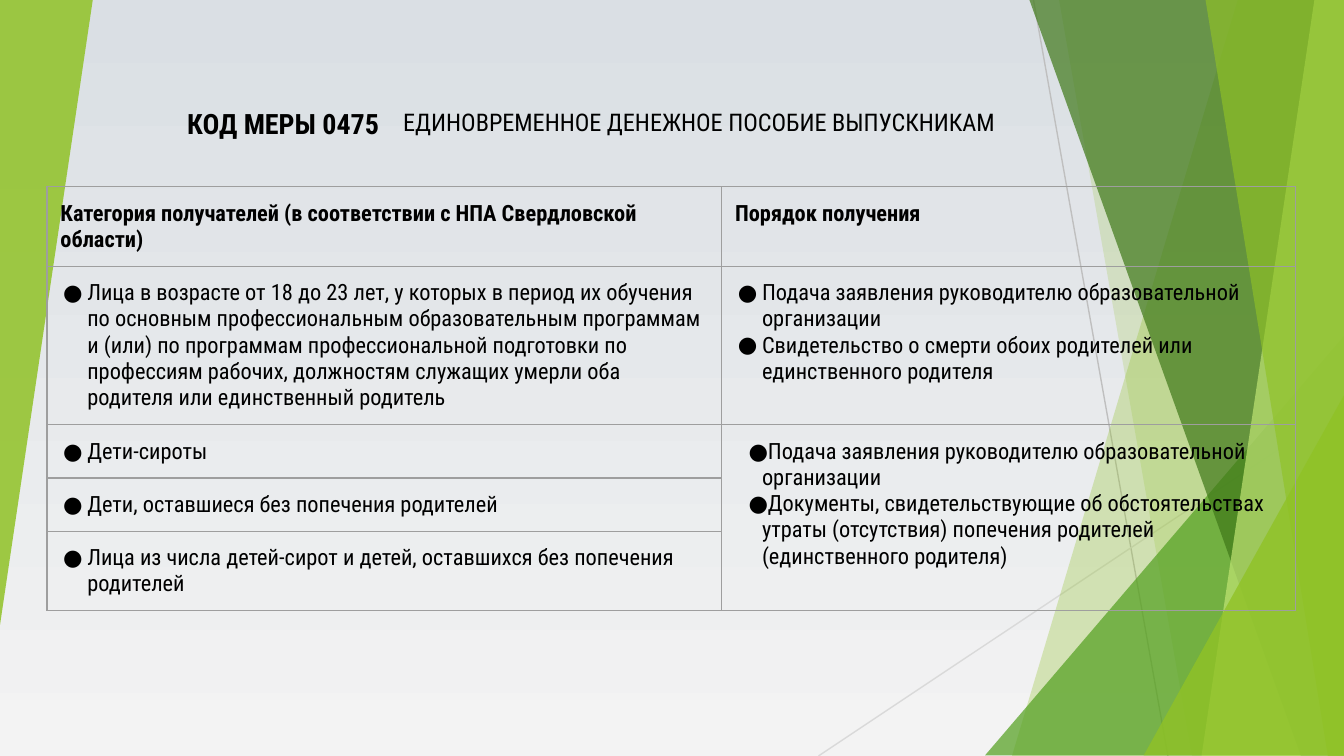
from dataclasses import dataclass

from lxml.etree import SubElement
from pptx import Presentation
from pptx.dml.color import RGBColor
from pptx.enum.shapes import MSO_CONNECTOR, MSO_SHAPE
from pptx.enum.text import MSO_ANCHOR, MSO_AUTO_SIZE, PP_ALIGN
from pptx.oxml import parse_xml
from pptx.oxml.ns import nsdecls, qn
from pptx.util import Inches, Pt

WIDTH = 10
HEIGHT = WIDTH * 9 / 16
FONT = "Roboto Condensed"
BLACK, BORDER, GREEN = "000000", "9E9E9E", "90C226"
COLUMNS = [5.02, 4.27]
ROWS = [0.59, 1.18, 0.39, 0.39, 0.59]


@dataclass
class Ray:
    start: tuple[float, float]
    end: tuple[float, float]
    color: str


@dataclass
class Band:
    """A slanted band that fills everything up to the right slide edge."""
    top_x: float
    bottom_x: float
    color: str
    opacity: int


@dataclass
class Wedge:
    left: float
    top: float
    width: float
    height: float
    color: str
    opacity: int
    rotation: int = 0


@dataclass
class Entry:
    row: int
    column: int
    lines: list[str]
    heading: bool = False
    left_margin: float = 0.1
    indent: float = 0.2


RAYS = [
    Ray((7.69, 0), (8.69, HEIGHT), "BFBFBF"),
    Ray((WIDTH, 3.02), (6.09, HEIGHT), "D9D9D9"),
]
FACETS = [
    Band(9.21, 7.53, GREEN, 30),
    Band(7.88, 8.87, GREEN, 20),
    Wedge(7.33, 2.5, 2.67, 3.12, "54A021", 72),
    Band(7.66, 9.68, "3F7819", 70),
    Band(9.78, 8.94, "C0E474", 70),
    Band(8.97, 9.88, GREEN, 65),
    Wedge(8.51, 2.94, 1.49, 2.68, GREEN, 80),
    Wedge(0, 0, 0.69, 4.65, GREEN, 85, 180),
]
APPLICATION = "Подача заявления руководителю образовательной организации"
ENTRIES = [
    Entry(0, 0, ["Категория получателей (в соответствии с НПА Свердловской области)"], True),
    Entry(0, 1, ["Порядок получения"], True),
    Entry(1, 0, ["Лица в возрасте от 18 до 23 лет, у которых в период их обучения по основным "
                 "профессиональным образовательным программам и (или) по программам "
                 "профессиональной подготовки по профессиям рабочих, должностям служащих "
                 "умерли оба родителя или единственный родитель"]),
    Entry(1, 1, [APPLICATION,
                 "Свидетельство о смерти обоих родителей или единственного родителя"]),
    Entry(2, 0, ["Дети-сироты"]),
    Entry(2, 1, [APPLICATION,
                 "Документы, свидетельствующие об обстоятельствах утраты (отсутствия) "
                 "попечения родителей (единственного родителя)"],
          left_margin=0.2, indent=0.1),
    Entry(3, 0, ["Дети, оставшиеся без попечения родителей"]),
    Entry(4, 0, ["Лица из числа детей-сирот и детей, оставшихся без попечения родителей"]),
]


def rgb(value: str) -> RGBColor:
    return RGBColor.from_string(value)


def style(para, size: float, bold: bool = False) -> None:
    font = para.font
    font.name, font.size, font.bold = FONT, Pt(size), bold
    font.color.rgb = rgb(BLACK)


def draw_ray(page, ray: Ray) -> None:
    line = page.shapes.add_connector(
        MSO_CONNECTOR.STRAIGHT, *map(Inches, ray.start + ray.end))
    line.line.color.rgb = rgb(ray.color)
    line.line.width = Pt(0.75)
    SubElement(line.element.spPr, qn("a:effectLst"))


def draw_facet(page, facet: Band | Wedge) -> None:
    if isinstance(facet, Band):
        builder = page.shapes.build_freeform(Inches(facet.top_x), 0)
        builder.add_line_segments([
            (Inches(x), Inches(y)) for x, y in
            [(WIDTH, 0), (WIDTH, HEIGHT), (facet.bottom_x, HEIGHT)]])
        shape = builder.convert_to_shape()
    else:
        shape = page.shapes.add_shape(MSO_SHAPE.ISOSCELES_TRIANGLE, *map(
            Inches, (facet.left, facet.top, facet.width, facet.height)))
        shape.adjustments[0] = 1
        shape.rotation = facet.rotation
    shape.shadow.inherit = False
    shape.line.fill.background()
    shape.fill.solid()
    shape.fill.fore_color.rgb = rgb(facet.color)
    color = shape.element.spPr.find(f"{qn('a:solidFill')}/{qn('a:srgbClr')}")
    SubElement(color, qn("a:alpha"), val=str(facet.opacity * 1000))


def set_caption(box, place: tuple, text: str, size: float, inset: tuple,
                align: PP_ALIGN, bold: bool = False):
    box.left, box.top, box.width, box.height = map(Inches, place)
    frame = box.text_frame
    frame.word_wrap, frame.auto_size = True, MSO_AUTO_SIZE.NONE
    frame.vertical_anchor = MSO_ANCHOR.MIDDLE
    frame.margin_left = frame.margin_right = Inches(inset[0])
    frame.margin_top = frame.margin_bottom = Inches(inset[1])
    para = frame.paragraphs[0]
    para.text, para.alignment = text, align
    style(para, size, bold)
    return para


def add_bullet(para, indent: float) -> None:
    """Must run before the paragraph font is set, to keep the XML order valid."""
    props = para._p.get_or_add_pPr()
    props.set("marL", str(Inches(indent)))
    props.set("indent", str(Inches(-0.18)))
    SubElement(SubElement(props, qn("a:buClr")), qn("a:srgbClr"), val=BLACK)
    SubElement(props, qn("a:buFont"), typeface=FONT)
    SubElement(props, qn("a:buChar"), char="●")


def format_cell(cell) -> None:
    cell.fill.background()
    props = cell._tc.get_or_add_tcPr()
    for index, side in enumerate("LRTB"):
        props.insert(index, parse_xml(
            f'<a:ln{side} {nsdecls("a")} w="{Pt(0.75)}"><a:solidFill>'
            f'<a:srgbClr val="{BORDER}"/></a:solidFill></a:ln{side}>'))


def fill_cell(cell, entry: Entry) -> None:
    cell.margin_left = Inches(entry.left_margin)
    cell.margin_right = cell.margin_top = cell.margin_bottom = Inches(0.1)
    frame = cell.text_frame
    frame.text = "\n".join(entry.lines)
    for para in frame.paragraphs:
        if not entry.heading:
            add_bullet(para, entry.indent)
        style(para, 12, entry.heading)


def draw_table(page) -> None:
    table = page.shapes.add_table(len(ROWS), len(COLUMNS), *map(
        Inches, (0.35, 1.39, sum(COLUMNS), sum(ROWS)))).table
    table.first_row = table.horz_banding = False
    for column, width in zip(table.columns, COLUMNS):
        column.width = Inches(width)
    for row, height in zip(table.rows, ROWS):
        row.height = Inches(height)
    for cell in table.iter_cells():
        format_cell(cell)
    table.cell(2, 1).merge(table.cell(4, 1))
    for entry in ENTRIES:
        fill_cell(table.cell(entry.row, entry.column), entry)


def main() -> None:
    deck = Presentation()
    deck.slide_width, deck.slide_height = Inches(WIDTH), Inches(HEIGHT)
    page = deck.slides.add_slide(deck.slide_layouts[5])
    backdrop = page.background.fill
    backdrop.gradient()
    backdrop.gradient_angle = 270
    for stop, color in zip(backdrop.gradient_stops, ("DADFE4", "F3F3F3")):
        stop.color.rgb = rgb(color)

    for ray in RAYS:
        draw_ray(page, ray)
    for facet in FACETS:
        draw_facet(page, facet)
    title = set_caption(page.shapes.title, (2.93, 0.53, 6.3, 0.78),
                        "ЕДИНОВРЕМЕННОЕ ДЕНЕЖНОЕ ПОСОБИЕ ВЫПУСКНИКАМ",
                        13, (0.07, 0.04), PP_ALIGN.LEFT)
    title.line_spacing = 0.9
    set_caption(page.shapes.add_textbox(0, 0, 0, 0), (0.81, 0.53, 2.11, 0.77),
                "КОД МЕРЫ 0475", 15, (0.1, 0.1), PP_ALIGN.RIGHT, bold=True)
    draw_table(page)
    deck.save("out.pptx")


if __name__ == "__main__":
    main()
